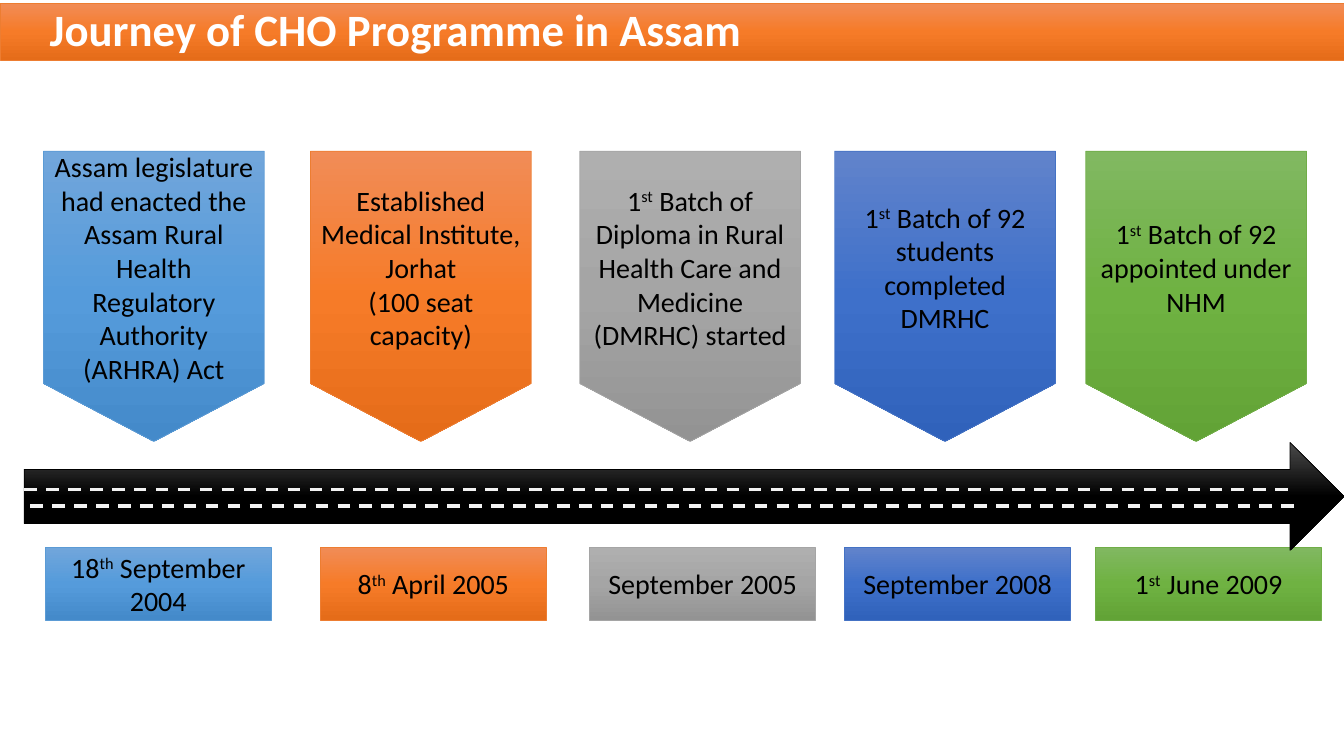
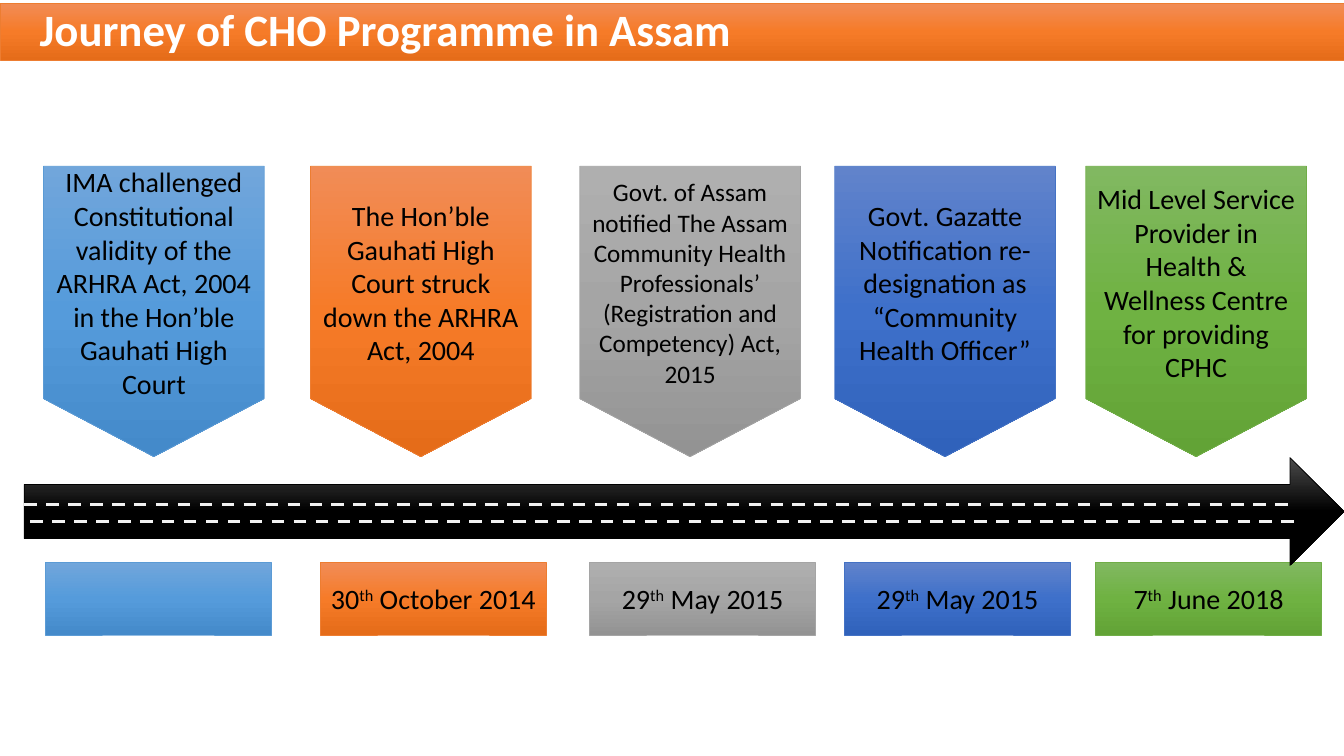
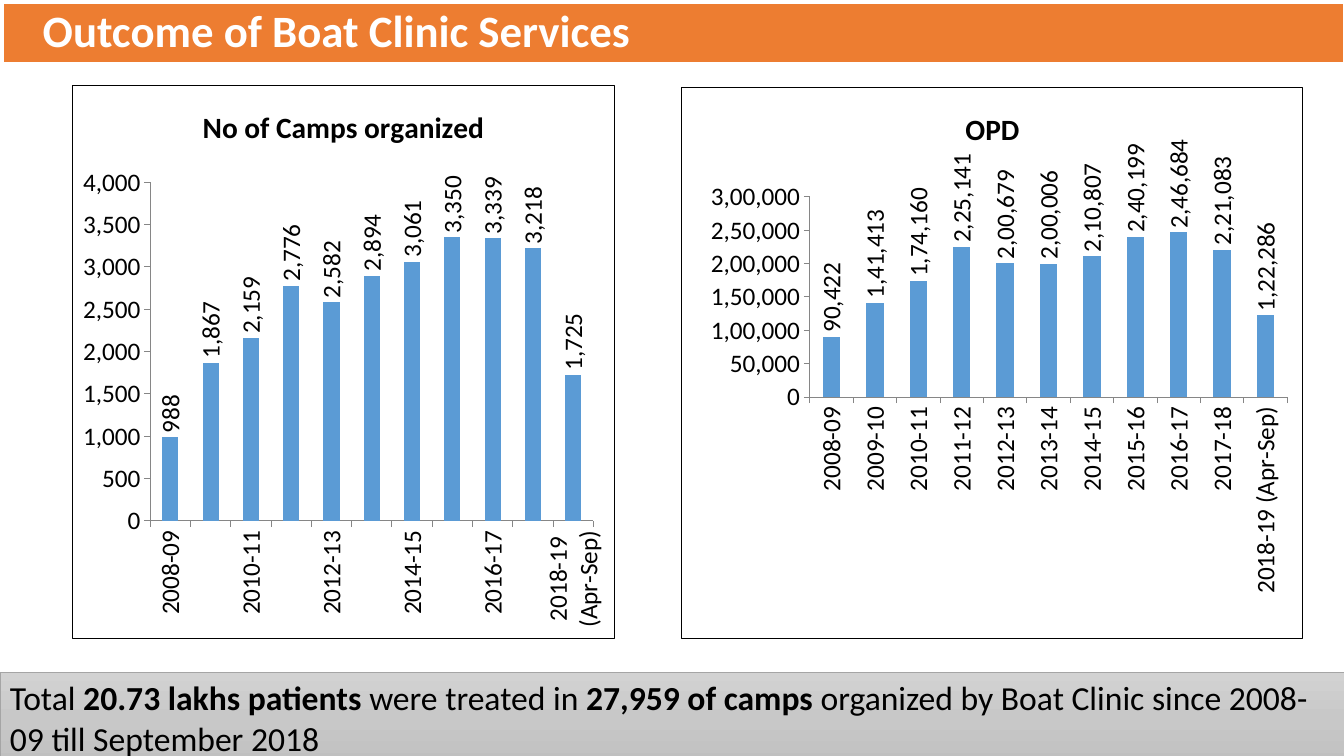
from copy import deepcopy

from lxml.etree import SubElement
from pptx import Presentation
from pptx.chart.data import CategoryChartData
from pptx.dml.color import RGBColor
from pptx.enum.chart import XL_CHART_TYPE, XL_LABEL_POSITION, XL_TICK_MARK
from pptx.enum.dml import MSO_LINE
from pptx.enum.shapes import MSO_CONNECTOR, MSO_SHAPE
from pptx.enum.text import MSO_ANCHOR, PP_ALIGN
from pptx.oxml import parse_xml
from pptx.oxml.ns import nsdecls, qn
from pptx.util import Inches, Pt

WIDTH, HEIGHT = Inches(13.33), Inches(7.5)
FONT = "Calibri"
BLACK, WHITE, LANE, AXIS = "000000", "FFFFFF", "F2F2F2", "868686"
BLUE = ("71A6DB", "559BDB", "448ACA", "5B9BD5")
ORANGE = ("F18C57", "F67B28", "E56C19", "ED7D31")
GREY = ("AFAFAF", "A5A5A5", "939393", "A5A5A5")
INDIGO = ("6183CB", "3E70CA", "3062BB", "4472C4")
GREEN = ("81B861", "6FB242", "62A336", "70AD47")
ROAD = ("4B4B4B", "000000", "000000", "000000")
SILVER = ("D2D2D2", "C8C8C8", "C0C0C0", "A5A5A5")

COLUMNS = [
    (3.23, 3.38, BLUE),
    (23.1, 23.85, ORANGE),
    (43.13, 43.88, GREY),
    (62.1, 62.85, INDIGO),
    (80.78, 81.53, GREEN),
]
FOUNDING_STEPS = [
    ("Assam legislature had enacted the Assam Rural Health Regulatory Authority (ARHRA) Act",
     "18^th^ September 2004", 20),
    ("Established Medical Institute, Jorhat\n(100 seat capacity)", "8^th^ April 2005", 20),
    ("1^st^ Batch of Diploma in Rural Health Care and Medicine (DMRHC) started",
     "September 2005", 20),
    ("1^st^ Batch of 92 students completed DMRHC", "September 2008", 20),
    ("1^st^ Batch of 92 appointed under NHM", "1^st^ June 2009", 20),
]
LEGAL_STEPS = [
    ("IMA challenged Constitutional validity of the ARHRA Act, 2004 in the Hon’ble "
     "Gauhati High Court", "", 20),
    ("The Hon’ble Gauhati High Court struck down the ARHRA Act, 2004",
     "30^th^ October 2014", 20),
    ("Govt. of Assam notified The Assam Community Health Professionals’ "
     "(Registration and Competency) Act, 2015", "29^th^ May 2015", 18),
    ("Govt. Gazatte Notification re-designation as “Community Health Officer”",
     "29^th^ May 2015", 20),
    ("Mid Level Service Provider in Health & Wellness Centre for providing CPHC",
     "7^th^ June 2018", 20),
]

YEARS = [f"{year}-{year - 1999:02d}" for year in range(2008, 2018)] + ["2018-19 (Apr-Sep)"]
CAMPS = [988, 1867, 2159, 2776, 2582, 2894, 3061, 3350, 3339, 3218, 1725]
PATIENTS = [90422, 141413, 174160, 225141, 200679, 200006,
            210807, 240199, 246684, 221083, 122286]
INDIAN_NUMBER = r"[>9999999]##\,##\,##\,##0;[>99999]##\,##\,##0;##,##0"


def color(value):
    return RGBColor.from_string(value)


def across(percent):
    return round(WIDTH * percent / 100)


def down(percent):
    return round(HEIGHT * percent / 100)


def place(left, top, width, height):
    return across(left), down(top), across(width), down(height)


def write(shape, text, size=20, ink=BLACK, bold=False, align=PP_ALIGN.CENTER,
          anchor=MSO_ANCHOR.MIDDLE, spacing=None, indent=None):
    frame = shape.text_frame
    frame.word_wrap = True
    frame.vertical_anchor = anchor
    if indent is not None:
        frame.margin_left = across(indent)
    for number, line in enumerate(text.split("\n")):
        paragraph = frame.add_paragraph() if number else frame.paragraphs[0]
        paragraph.alignment = align
        if spacing:
            paragraph.line_spacing = spacing
        for strong, part in enumerate(line.split("*")):
            for raised, piece in enumerate(part.split("^")):
                if not piece:
                    continue
                run = paragraph.add_run()
                run.text = piece
                run.font.name, run.font.size = FONT, Pt(size)
                run.font.bold = bold or strong % 2 == 1
                run.font.color.rgb = color(ink)
                if raised % 2:
                    run._r.get_or_add_rPr().set("baseline", "30000")


def add_box(slide, kind, box, fill, line, line_width=0.5):
    shape = slide.shapes.add_shape(kind, *place(*box))
    shape.shadow.inherit = False
    if isinstance(fill, str):
        shape.fill.solid()
        shape.fill.fore_color.rgb = color(fill)
    else:
        shape.fill.gradient()
        shape.fill.gradient_angle = 270
        stops = shape._element.spPr.find(qn("a:gradFill")).find(qn("a:gsLst"))
        stops.insert(1, deepcopy(stops[0]))
        for stop, position, tint in zip(shape.fill.gradient_stops, (0, 0.5, 1), fill):
            stop.position = position
            stop.color.rgb = color(tint)
    shape.line.color.rgb = color(line)
    shape.line.width = Pt(line_width)
    return shape


def add_palette_box(slide, kind, box, palette):
    return add_box(slide, kind, box, palette[:3], palette[3])


def write_title(band, text, indent):
    write(band, text, size=32, ink=WHITE, bold=True, align=PP_ALIGN.LEFT,
          spacing=0.9, indent=indent)


def add_lane(slide, left, right, row):
    lane = slide.shapes.add_connector(
        MSO_CONNECTOR.STRAIGHT, across(left), down(row), across(right), down(row))
    lane.line.color.rgb = color(LANE)
    lane.line.width = Pt(2.25)
    lane.line.dash_style = MSO_LINE.DASH
    SubElement(lane._element.spPr, qn("a:effectLst"))


def add_journey(presentation, steps, top, indent):
    slide = presentation.slides.add_slide(presentation.slide_layouts[6])
    for (left, date_left, palette), (event, date, size) in zip(COLUMNS, steps):
        pennant = add_palette_box(slide, MSO_SHAPE.FLOWCHART_OFFPAGE_CONNECTOR,
                                  (left, top, 16.43, 38.4), palette)
        write(pennant, event, size=size)
        date_box = add_palette_box(slide, MSO_SHAPE.RECTANGLE,
                                   (date_left, top + 52.4, 16.8, 9.6), palette)
        write(date_box, date)
    add_palette_box(slide, MSO_SHAPE.RIGHT_ARROW, (1.8, top + 38.53, 98.2, 14.27), ROAD)
    add_lane(slide, 1.8, 96.3, top + 44.7)
    add_lane(slide, 2.25, 96.83, top + 46.93)
    band = add_palette_box(slide, MSO_SHAPE.RECTANGLE, (0, 0.4, 100, 7.6), ORANGE)
    write_title(band, "Journey of CHO Programme in Assam", indent)


def turn_upright(element):
    body = element.find(qn("c:txPr")).find(qn("a:bodyPr"))
    body.set("rot", "-5400000")
    body.set("vert", "horz")


def style_font(font, size=18, bold=False):
    font.name, font.size, font.bold = FONT, Pt(size), bold
    font.color.rgb = color(BLACK)


def style_axis(axis):
    axis.has_major_gridlines = False
    axis.major_tick_mark = XL_TICK_MARK.OUTSIDE
    axis.format.line.color.rgb = color(AXIS)
    style_font(axis.tick_labels.font)


def add_border(chart):
    chart._chartSpace.find(qn("c:chart")).addnext(parse_xml(
        f'<c:spPr {nsdecls("c", "a")}><a:noFill/><a:ln w="9525"><a:solidFill>'
        f'<a:srgbClr val="{BLACK}"/></a:solidFill></a:ln></c:spPr>'))


def set_plot_layout(chart, bounds):
    plot_area = chart._chartSpace.find(qn("c:chart")).find(qn("c:plotArea"))
    layout = plot_area.find(qn("c:layout"))
    if layout is not None:
        plot_area.remove(layout)
    layout = parse_xml(f'<c:layout {nsdecls("c")}><c:manualLayout/></c:layout>')
    settings = [("layoutTarget", "inner"), ("xMode", "edge"), ("yMode", "edge")]
    settings += zip("xywh", map(str, bounds))
    for name, value in settings:
        SubElement(layout[0], qn(f"c:{name}")).set("val", value)
    plot_area.insert(0, layout)


def add_column_chart(slide, box, title, values, top, step, plot_bounds=None):
    data = CategoryChartData()
    data.categories = YEARS
    data.add_series(title, values)
    chart = slide.shapes.add_chart(
        XL_CHART_TYPE.COLUMN_CLUSTERED, *place(*box), data).chart
    style_font(chart.font)
    chart.has_legend = False
    chart.has_title = True
    paragraph = chart.chart_title.text_frame.paragraphs[0]
    run = paragraph.add_run()
    run.text = title
    style_font(run.font, size=21, bold=True)

    style_axis(chart.category_axis)
    turn_upright(chart.category_axis._element)
    value_axis = chart.value_axis
    style_axis(value_axis)
    value_axis.minimum_scale, value_axis.maximum_scale = 0, top
    value_axis.major_unit = step

    plot = chart.plots[0]
    plot.gap_width = 150
    plot.vary_by_categories = False
    plot.series[0].format.fill.solid()
    plot.series[0].format.fill.fore_color.rgb = color(BLUE[3])
    plot.has_data_labels = True
    labels = plot.data_labels
    labels.show_value = True
    labels.position = XL_LABEL_POSITION.OUTSIDE_END
    style_font(labels.font)
    turn_upright(labels._element)
    for numbers in (labels, value_axis.tick_labels):
        numbers.number_format = INDIAN_NUMBER
        numbers.number_format_is_linked = False
    add_border(chart)
    if plot_bounds:
        set_plot_layout(chart, plot_bounds)


def add_outcome(presentation):
    slide = presentation.slides.add_slide(presentation.slide_layouts[6])
    band = add_box(slide, MSO_SHAPE.RECTANGLE, (0.23, 0.4, 99.77, 8), ORANGE[3], WHITE, 1.5)
    write_title(band, "Outcome of Boat Clinic Services", 2.95)
    add_column_chart(slide, (5.33, 11.2, 40.43, 73.33), "No of Camps organized",
                     CAMPS, 4000, 500)
    add_column_chart(slide, (50.7, 11.47, 46.28, 73.07), "OPD", PATIENTS, 300000, 50000,
                     plot_bounds=(0.206, 0.199, 0.769, 0.363))
    summary = add_palette_box(slide, MSO_SHAPE.RECTANGLE, (0, 88.93, 100, 12.13), SILVER)
    write(summary, "Total *20.73 lakhs patients* were treated in *27,959 of camps* organized "
          "by Boat Clinic since 2008-09 till September 2018",
          size=24, align=PP_ALIGN.LEFT, anchor=MSO_ANCHOR.TOP)


def main():
    presentation = Presentation()
    presentation.slide_width, presentation.slide_height = WIDTH, HEIGHT
    add_journey(presentation, FOUNDING_STEPS, top=20, indent=3.7)
    add_journey(presentation, LEGAL_STEPS, top=22, indent=2.95)
    add_outcome(presentation)
    presentation.save("out.pptx")


if __name__ == "__main__":
    main()
